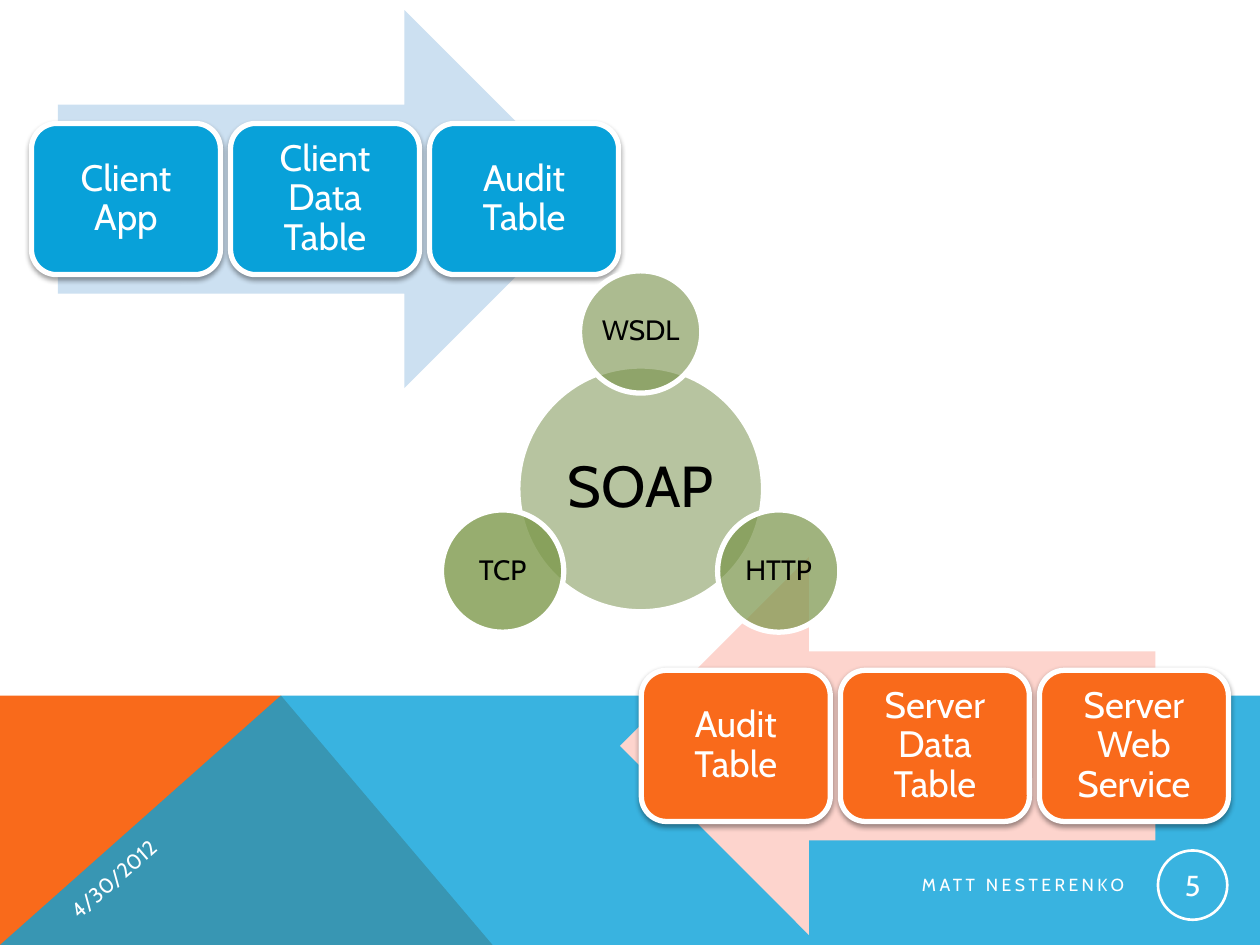
from dataclasses import dataclass
from math import cos, radians, sin

from lxml import etree
from pptx import Presentation
from pptx.dml.color import RGBColor
from pptx.enum.shapes import MSO_SHAPE
from pptx.enum.text import MSO_ANCHOR, PP_ALIGN
from pptx.oxml.ns import qn
from pptx.util import Inches, Pt

ARROW, CARD = MSO_SHAPE.RIGHT_ARROW, MSO_SHAPE.ROUNDED_RECTANGLE
OVAL = MSO_SHAPE.OVAL
LEFT, CENTER, RIGHT = PP_ALIGN.LEFT, PP_ALIGN.CENTER, PP_ALIGN.RIGHT
MIDDLE = MSO_ANCHOR.MIDDLE

COLS, ROWS = 100, 75
WIDTH, HEIGHT = Inches(10), Inches(7.5)


@dataclass(frozen=True)
class Theme:
    font: str = "Cabin"
    white: str = "FFFFFF"
    black: str = "000000"
    blue: str = "08A1D9"
    pale_blue: str = "CCE0F1"
    orange: str = "F96A1B"
    pale_orange: str = "FDD4CD"
    hub_green: str = "718A43"
    hub_size: float = 33
    card_size: float = 21
    number_size: float = 16.5
    node_size: float = 16
    date_size: float = 12
    footer_size: float = 10


@dataclass(frozen=True)
class Box:
    """Columns and rows of the slide grid."""
    col: float
    row: float
    cols: float
    rows: float

    def emu(self) -> tuple:
        return x(self.col), y(self.row), x(self.cols), y(self.rows)


@dataclass(frozen=True)
class Flow:
    arrow: Box
    rotation: int
    arrow_color: str
    card_color: str
    first_col: float
    row: float
    labels: tuple


@dataclass(frozen=True)
class Node:
    label: str
    angle: int
    color: str
    opacity: int


THEME = Theme()
CARD_COLS, CARD_ROWS, CARD_STEP = 15, 12, 15.8
FLOWS = (
    Flow(Box(4.6, 0.8, 42.5, 30), 0, THEME.pale_blue, THEME.blue, 2.5, 9.8,
         ("Client App", "Client Data Table", "Audit Table")),
    Flow(Box(49.2, 44.2, 42.5, 30), 180, THEME.pale_orange, THEME.orange, 50.9, 53.2,
         ("Audit Table", "Server Data Table", "Server Web Service")),
)
HUB_COL, HUB_ROW, HUB_SPAN = 50.85, 38.8, 19.5
ORBIT_ROW, ORBIT, NODE_SPAN = 39, 12.65, 9.7
NODES = (
    Node("WSDL", -90, "758F46", 60),
    Node("HTTP", 30, "799448", 70),
    Node("TCP", 150, "7D994B", 80),
)


def x(cols: float) -> int:
    return round(WIDTH * cols / COLS)


def y(rows: float) -> int:
    return round(HEIGHT * rows / ROWS)


def rgb(color: str) -> RGBColor:
    return RGBColor.from_string(color)


def paint(s, color: str | None, opacity: int = 100, line: float = 0) -> None:
    """Set fill and white outline; no color means no fill."""
    s.shadow.inherit = False
    if color:
        s.fill.solid()
        s.fill.fore_color.rgb = rgb(color)
        if opacity < 100:
            clr = s.fill._xPr.find(qn("a:solidFill"))[0]
            etree.SubElement(clr, qn("a:alpha"), val=str(opacity * 1000))
    else:
        s.fill.background()
    if line:
        s.line.color.rgb = rgb(THEME.white)
        s.line.width = Pt(line)
    else:
        s.line.fill.background()


def cast_shadow(s) -> None:
    effects = s._element.spPr.find(qn("a:effectLst"))
    shadow = etree.SubElement(effects, qn("a:outerShdw"), blurRad=str(Pt(3.1)),
                              dist=str(Pt(1.6)), dir="5400000", rotWithShape="0")
    clr = etree.SubElement(shadow, qn("a:srgbClr"), val=THEME.black)
    etree.SubElement(clr, qn("a:alpha"), val="38000")


def write(s, text: str, size: float, color: str = THEME.white, align=CENTER,
          inset: float | None = None, spacing: float = 1, tracking: float = 0) -> None:
    tf = s.text_frame
    tf.word_wrap = True
    tf.vertical_anchor = MIDDLE
    if inset is not None:
        tf.margin_left = tf.margin_right = Inches(inset)
        tf.margin_top = tf.margin_bottom = Inches(inset)
    p = tf.paragraphs[0]
    p.alignment = align
    p.line_spacing = spacing
    r = p.add_run()
    r.text = text
    r.font.name = THEME.font
    r.font.size = Pt(size)
    r.font.color.rgb = rgb(color)
    if tracking:
        r.font._element.set("spc", str(round(tracking * 100)))


def add_band(shapes, points: tuple, color: str, opacity: int = 100) -> None:
    corners = [(x(col), y(row)) for col, row in points]
    builder = shapes.build_freeform(*corners[0], scale=1.0)
    builder.add_line_segments(corners[1:], close=True)
    paint(builder.convert_to_shape(), color, opacity)


def add_flow(shapes, flow: Flow) -> None:
    group = shapes.add_group_shape().shapes
    arrow = group.add_shape(ARROW, *flow.arrow.emu())
    arrow.rotation = flow.rotation
    paint(arrow, flow.arrow_color)
    for i, label in enumerate(flow.labels):
        box = Box(flow.first_col + i * CARD_STEP, flow.row, CARD_COLS, CARD_ROWS)
        card = group.add_shape(CARD, *box.emu())
        paint(card, flow.card_color, line=3)
        cast_shadow(card)
        write(card, label, THEME.card_size, inset=0.09, spacing=0.9)


def add_circle(shapes, col: float, row: float, span: float, color: str, opacity: int,
               label: str, size: float, inset: float) -> None:
    """Draw a labelled circle around a centre point."""
    box = Box(col - span / 2, row - span / 2, span, span)
    s = shapes.add_shape(OVAL, *box.emu())
    paint(s, color, opacity, line=3)
    write(s, label, size, THEME.black, inset=inset, spacing=0.9)


def add_protocols(shapes) -> None:
    group = shapes.add_group_shape().shapes
    add_circle(group, HUB_COL, HUB_ROW, HUB_SPAN, THEME.hub_green, 50,
               "SOAP", THEME.hub_size, 0.05)
    for node in NODES:
        angle = radians(node.angle)
        add_circle(group, HUB_COL + ORBIT * cos(angle), ORBIT_ROW + ORBIT * sin(angle),
                   NODE_SPAN, node.color, node.opacity, node.label, THEME.node_size, 0.02)


def add_footer(shapes) -> None:
    date = shapes.add_textbox(*Box(2.2, 64.2, 23.8, 2.2).emu())
    date.rotation = 319
    write(date, "4/30/2012", THEME.date_size, align=LEFT)
    author = shapes.add_textbox(*Box(38.5, 68.7, 51.7, 3).emu())
    write(author, "MATT NESTERENKO", THEME.footer_size, align=RIGHT, tracking=2)
    number = shapes.add_shape(OVAL, *Box(91.9, 67.5, 5.5, 5.5).emu())
    paint(number, None, line=1.5)
    write(number, "5", THEME.number_size, inset=0.01)


def main() -> None:
    prs = Presentation()
    prs.slide_width, prs.slide_height = WIDTH, HEIGHT
    shapes = prs.slides.add_slide(prs.slide_layouts[6]).shapes
    top, peak = 55.2, 22.3
    add_band(shapes, ((0, ROWS), (0, top), (peak, top), (39.1, ROWS)), THEME.orange)
    add_band(shapes, ((0, ROWS), (peak, top), (COLS, top), (COLS, ROWS)), THEME.blue, 80)
    for flow in FLOWS:
        add_flow(shapes, flow)
    add_protocols(shapes)
    add_footer(shapes)
    prs.save("out.pptx")


if __name__ == "__main__":
    main()
